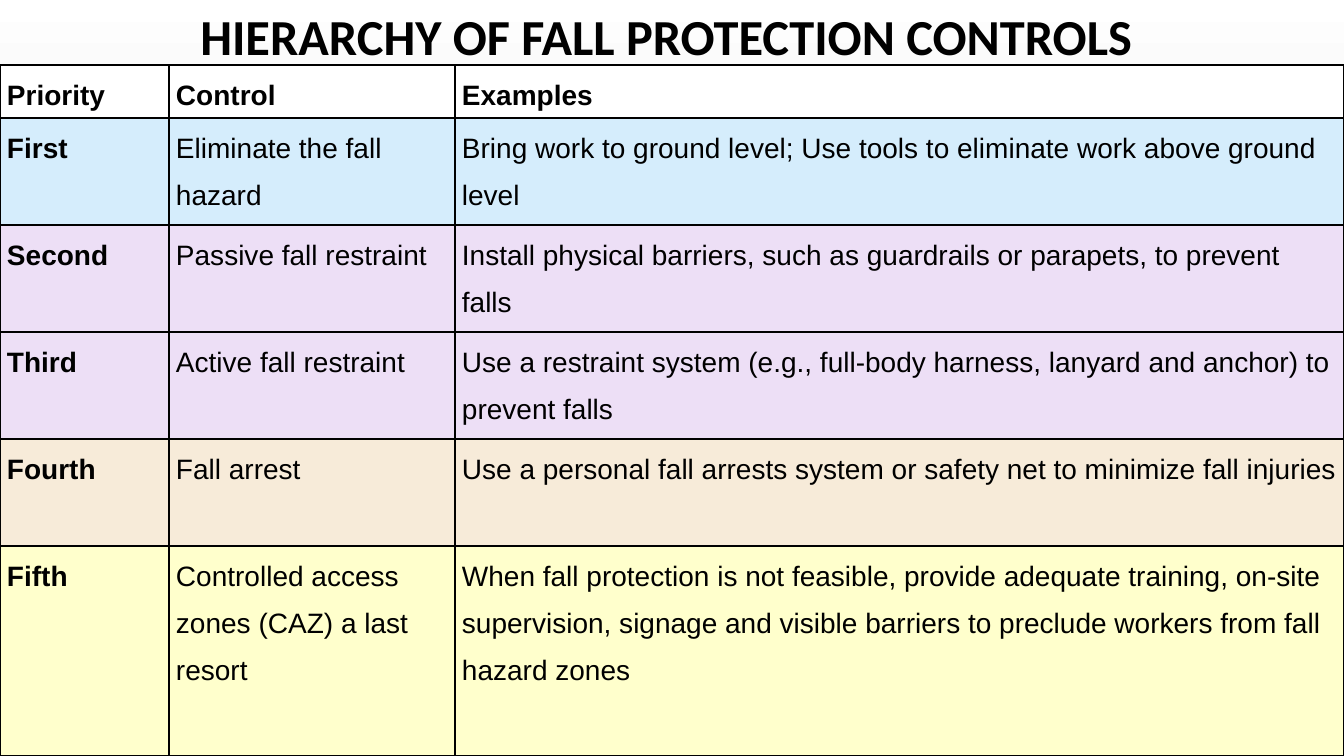
from lxml import etree
from pptx import Presentation
from pptx import util as u
from pptx.dml import color
from pptx.enum import text
from pptx.oxml import ns

SCALE = 12192000 / 1344
HUES = {
    "ink": "000000", "white": "FFFFFF", "grey": "B9B9B9", "blue": "D5EDFC",
    "violet": "EDDFF6", "sand": "F7EBD9", "yellow": "FFFFCC",
}
COLS = [169, 286, 889]
ROWS = [
    (53, "white", "Priority", "Control", "Examples"),
    (107, "blue", "First", "Eliminate the fall hazard",
     "Bring work to ground level; Use tools to eliminate work above ground level"),
    (107, "violet", "Second", "Passive fall restraint",
     "Install physical barriers, such as guardrails or parapets, to prevent falls"),
    (107, "violet", "Third", "Active fall restraint",
     "Use a restraint system (e.g., full-body harness, lanyard and anchor) to prevent falls"),
    (107, "sand", "Fourth", "Fall arrest",
     "Use a personal fall arrests system or safety net to minimize fall injuries"),
    (210, "yellow", "Fifth", "Controlled access zones (CAZ) a last resort",
     "When fall protection is not feasible, provide adequate training, on-site "
     "supervision, signage and visible barriers to preclude workers from fall hazard zones"),
]


def px(num):
    """Turn pixels into EMU."""
    return u.Emu(round(num * SCALE))


def hue(name):
    """Look up a colour."""
    return color.RGBColor.from_string(HUES[name])


def style(para, face, size, bold, lead):
    """Set the font and line spacing of a paragraph."""
    para.line_spacing = lead
    font = para.font
    font.name, font.size, font.bold = face, u.Pt(size), bold
    font.color.rgb = hue("ink")


def paint(slide):
    """Fill the background with a vertical gradient."""
    fill = slide.background.fill
    fill.gradient()
    fill.gradient_angle = 270
    for stop, name in zip(fill.gradient_stops, ["white", "grey"]):
        stop.color.rgb = hue(name)


def add_title(slide, words):
    """Add the centred heading."""
    box = slide.shapes.add_textbox(px(87), px(16), px(1159), px(46))
    frame = box.text_frame
    frame.word_wrap = True
    frame.vertical_anchor = text.MSO_ANCHOR.MIDDLE
    frame.margin_top = frame.margin_bottom = 0
    para = frame.paragraphs[0]
    para.text = words
    para.alignment = text.PP_ALIGN.CENTER
    style(para, "Calibri", 36, True, 0.9)


def edge(cell):
    """Draw thin lines on all four sides of a cell."""
    props = cell._tc.get_or_add_tcPr()
    for spot, side in enumerate(["lnL", "lnR", "lnT", "lnB"]):
        line = etree.Element(ns.qn(f"a:{side}"), w=str(u.Pt(1)))
        fill = etree.SubElement(line, ns.qn("a:solidFill"))
        etree.SubElement(fill, ns.qn("a:srgbClr"), val=HUES["ink"])
        props.insert(spot, line)


def fill_cell(cell, words, tint, bold):
    """Write and colour one cell."""
    cell.margin_left = cell.margin_right = px(7)
    cell.margin_top = cell.margin_bottom = 0
    cell.fill.solid()
    cell.fill.fore_color.rgb = hue(tint)
    para = cell.text_frame.paragraphs[0]
    para.text = words
    style(para, "Arial", 20, bold, 1.5)
    edge(cell)


def add_grid(slide):
    """Add the table of controls."""
    high = sum(row[0] for row in ROWS)
    frame = slide.shapes.add_table(
        len(ROWS), len(COLS), 0, px(65), px(sum(COLS)), px(high))
    grid = frame.table
    for col, wide in zip(grid.columns, COLS):
        col.width = px(wide)
    for r, (tall, tint, *cells) in enumerate(ROWS):
        grid.rows[r].height = px(tall)
        for c, words in enumerate(cells):
            fill_cell(grid.cell(r, c), words, tint, r == 0 or c == 0)


def main():
    """Build and save the slide."""
    deck = Presentation()
    deck.slide_width, deck.slide_height = px(1344), px(756)
    slide = deck.slides.add_slide(deck.slide_layouts[6])
    paint(slide)
    add_title(slide, "HIERARCHY OF FALL PROTECTION CONTROLS")
    add_grid(slide)
    deck.save("out.pptx")


if __name__ == "__main__":
    main()
